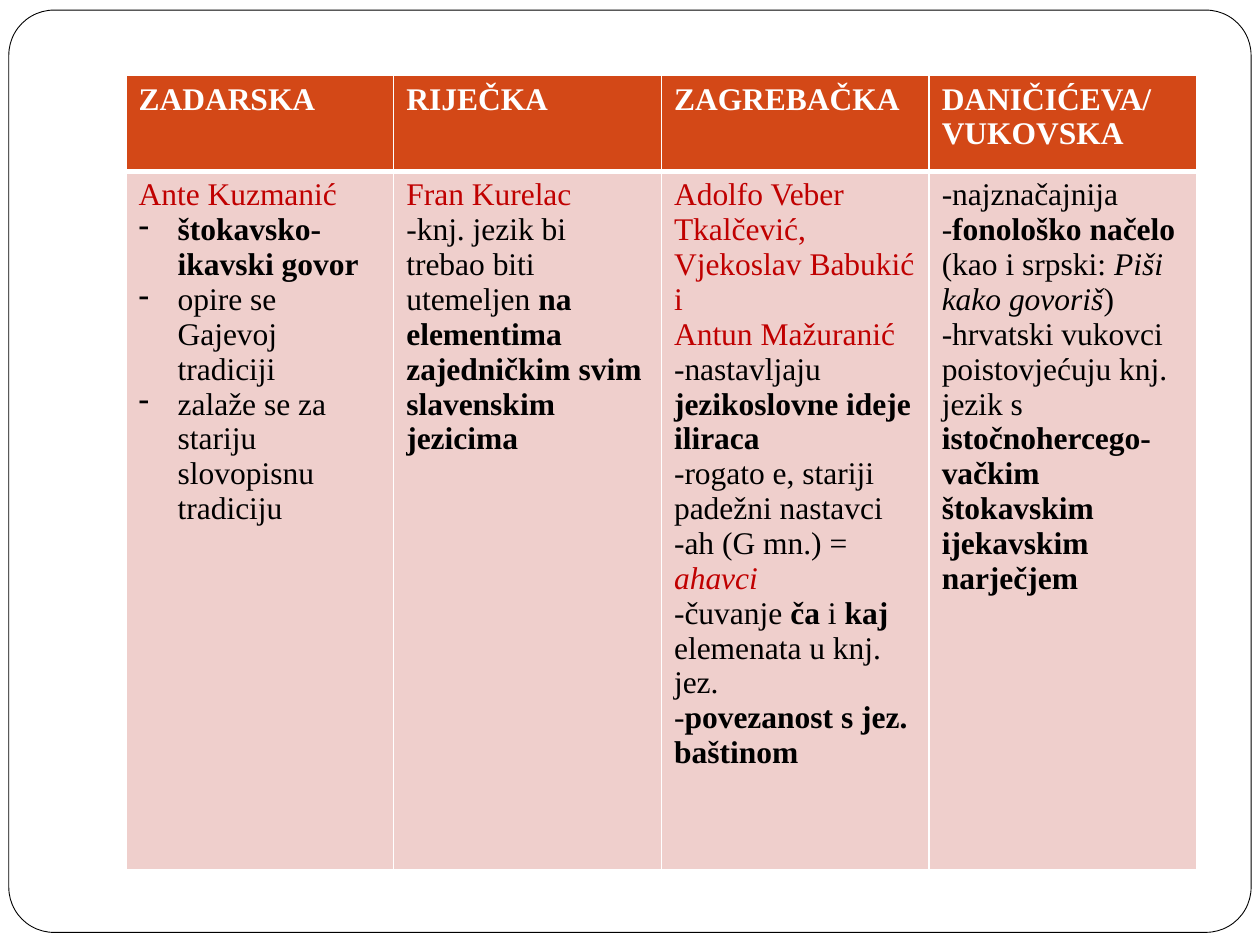
from dataclasses import dataclass

from lxml import etree
from pptx import Presentation
from pptx.dml.color import RGBColor
from pptx.enum.shapes import MSO_SHAPE
from pptx.oxml.ns import qn
from pptx.util import Inches, Pt

ROUND = MSO_SHAPE.ROUNDED_RECTANGLE


@dataclass(frozen=True)
class Theme:
    font: str = "Times New Roman"
    size: int = 18
    white: str = "FFFFFF"
    black: str = "000000"
    red: str = "C00000"
    head: str = "D34817"
    body: str = "EFCFCC"
    thin: float = 1
    thick: float = 3


THEME = Theme()

HEADS = [["ZADARSKA"], ["RIJEČKA"], ["ZAGREBAČKA"], ["DANIČIĆEVA/", "VUKOVSKA"]]

# A paragraph is a list of (text, marks): b bold, i italic, r red, - dash bullet.
BODIES = [
    [
        [("Ante Kuzmanić", "r")],
        [("štokavsko-ikavski govor", "b-")],
        [("opire se Gajevoj tradiciji", "-")],
        [("zalaže se za stariju slovopisnu tradiciju", "-")],
    ],
    [
        [("Fran Kurelac", "r")],
        [("-knj. jezik bi trebao biti utemeljen ", ""),
         ("na elementima zajedničkim svim slavenskim jezicima", "b")],
    ],
    [
        [("Adolfo Veber Tkalčević,", "r")],
        [("Vjekoslav Babukić i", "r")],
        [("Antun Mažuranić", "r")],
        [("-nastavljaju ", ""), ("jezikoslovne ideje iliraca", "b")],
        [("-rogato e, stariji padežni nastavci", "")],
        [("-ah (G mn.) = ", ""), ("ahavci", "ri")],
        [("-čuvanje ", ""), ("ča", "b"), (" i ", ""), ("kaj ", "b"),
         ("elemenata u knj. jez.", "")],
        [("-", ""), ("povezanost s jez. baštinom", "b")],
    ],
    [
        [("-najznačajnija", "")],
        [("-", ""), ("fonološko načelo ", "b"), ("(kao i srpski: ", ""),
         ("Piši kako govoriš", "i"), (")", "")],
        [("-hrvatski vukovci poistovjećuju knj. jezik s ", ""),
         ("istočnohercego-vačkim štokavskim ijekavskim narječjem", "b")],
    ],
]


def rgb(code):
    return RGBColor.from_string(code)


def add_text(para, text, color=THEME.black, bold=False, italic=False):
    run = para.add_run()
    run.text = text
    font = run.font
    font.name, font.size = THEME.font, Pt(THEME.size)
    font.bold, font.italic = bold, italic
    font.color.rgb = rgb(color)


def add_dash(para):
    """Give the paragraph a dash bullet with a hanging indent."""
    props = para._p.get_or_add_pPr()
    indent = Inches(0.31)
    props.set("marL", str(indent))
    props.set("indent", str(-indent))
    etree.SubElement(props, qn("a:buChar")).set("char", "-")


def style_cell(cell, fill, **widths):
    """Set the fill and the white borders; widths gives each side's points."""
    props = cell._tc.get_or_add_tcPr()
    for side in "LRTB":
        width = Pt(widths.get(side, THEME.thin))
        line = etree.SubElement(props, qn(f"a:ln{side}"), w=str(width))
        solid = etree.SubElement(line, qn("a:solidFill"))
        etree.SubElement(solid, qn("a:srgbClr"), val=THEME.white)
    cell.fill.solid()
    cell.fill.fore_color.rgb = rgb(fill)


def fill_cell(cell, paras, base, bold=False):
    frame = cell.text_frame
    for n, runs in enumerate(paras):
        para = frame.add_paragraph() if n else frame.paragraphs[0]
        if "-" in runs[0][1]:
            add_dash(para)
        for text, marks in runs:
            add_text(para, text, color=THEME.red if "r" in marks else base,
                     bold=bold or "b" in marks, italic="i" in marks)


def add_frame(slide, left, top, width, height):
    frame = slide.shapes.add_shape(ROUND, left, top, width, height)
    frame.adjustments[0] = 0.049
    frame.shadow.inherit = False
    frame.fill.solid()
    frame.fill.fore_color.rgb = rgb(THEME.white)
    frame.line.color.rgb = rgb(THEME.black)
    frame.line.width = Pt(0.5)


def add_grid(slide, left, top, width, height):
    """Place the table of schools: one column each, a head above a body."""
    count = len(HEADS)
    table = slide.shapes.add_table(2, count, left, top, width, height).table
    table.rows[0].height = Inches(0.76)
    table.rows[1].height = height - table.rows[0].height
    for n, (head, body) in enumerate(zip(HEADS, BODIES)):
        table.columns[n].width = width // count
        title, cell = table.cell(0, n), table.cell(1, n)
        style_cell(title, THEME.head, B=THEME.thick)
        style_cell(cell, THEME.body, T=THEME.thick)
        fill_cell(title, [[(text, "")] for text in head], THEME.white, bold=True)
        fill_cell(cell, body, THEME.black)


def main():
    deck = Presentation()
    deck.slide_width, deck.slide_height = Inches(10), Inches(7.5)
    slide = deck.slides.add_slide(deck.slide_layouts[6])
    add_frame(slide, Inches(0.07), Inches(0.08), Inches(9.86), Inches(7.32))
    add_grid(slide, Inches(1), Inches(0.6), Inches(8.5), Inches(6.3))
    deck.save("out.pptx")


if __name__ == "__main__":
    main()
